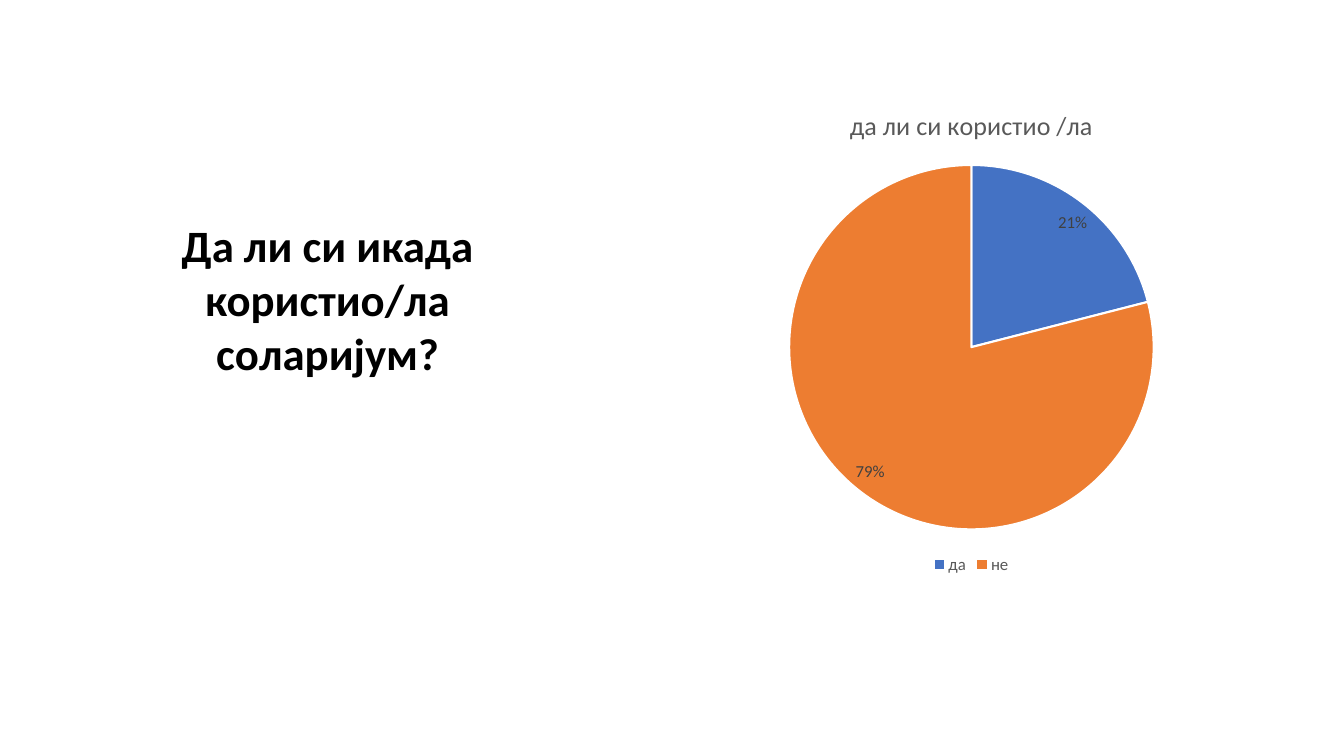
from dataclasses import dataclass

import pptx
import pptx.chart.data
import pptx.dml.color
import pptx.enum.chart
import pptx.enum.text
import pptx.util
from pptx.util import Inches


@dataclass
class Slice:
    label: str
    share: float
    color: str


SLICES = [Slice("да", 0.21, "4472C4"), Slice("не", 0.79, "ED7D31")]
CHART_TITLE = "да ли си користио /ла"


def rgb(value: str) -> pptx.dml.color.RGBColor:
    return pptx.dml.color.RGBColor.from_string(value)


def set_font(font, size: float, color: str, bold: bool = False) -> None:
    font.name = "Calibri"
    font.size = pptx.util.Pt(size)
    font.bold = bold
    font.color.rgb = rgb(color)


def add_question(s, text: str) -> None:
    title = s.shapes.title
    title.left, title.top = Inches(1.32), Inches(2.11)
    title.width, title.height = Inches(3.86), Inches(1.72)
    tf = title.text_frame
    tf.text = text
    tf.word_wrap = True
    tf.auto_size = pptx.enum.text.MSO_AUTO_SIZE.SHAPE_TO_FIT_TEXT
    tf.vertical_anchor = pptx.enum.text.MSO_ANCHOR.TOP
    p = tf.paragraphs[0]
    p.alignment = pptx.enum.text.PP_ALIGN.CENTER
    set_font(p.runs[0].font, 32, "000000", bold=True)


def add_pie(s, slices: list[Slice]) -> None:
    data = pptx.chart.data.CategoryChartData(number_format="0%")
    data.categories = [item.label for item in slices]
    data.add_series(CHART_TITLE, [item.share for item in slices])
    chart = s.shapes.add_chart(
        pptx.enum.chart.XL_CHART_TYPE.PIE,
        Inches(6.67), Inches(0.87), Inches(5.93), Inches(4.87), data).chart
    set_font(chart.font, 10, "000000")

    # Title and legend
    chart.has_title = True
    tf = chart.chart_title.text_frame
    tf.text = CHART_TITLE
    set_font(tf.paragraphs[0].runs[0].font, 18.6, "595959")
    chart.chart_title.include_in_layout = False
    chart.has_legend = True
    chart.legend.position = pptx.enum.chart.XL_LEGEND_POSITION.BOTTOM
    chart.legend.include_in_layout = False
    set_font(chart.legend.font, 12, "595959")

    # Slices
    plot = chart.plots[0]
    plot.vary_by_categories = True
    for i, item in enumerate(slices):
        fmt = plot.series[0].points[i].format
        fmt.fill.solid()
        fmt.fill.fore_color.rgb = rgb(item.color)
        fmt.line.color.rgb = rgb("FFFFFF")
        fmt.line.width = pptx.util.Pt(1.5)

    # Values on the slices
    labels = plot.series[0].data_labels
    labels.show_value = True
    labels.show_percentage = False
    labels.number_format = "0%"
    labels.number_format_is_linked = False
    labels.position = pptx.enum.chart.XL_LABEL_POSITION.BEST_FIT
    set_font(labels.font, 12, "404040")


def main() -> None:
    prs = pptx.Presentation()
    prs.slide_width, prs.slide_height = Inches(13.33), Inches(7.5)
    s = prs.slides.add_slide(prs.slide_layouts[5])
    add_pie(s, SLICES)
    add_question(s, "Да ли си икада користио/ла соларијум?")
    prs.save("out.pptx")


if __name__ == "__main__":
    main()
